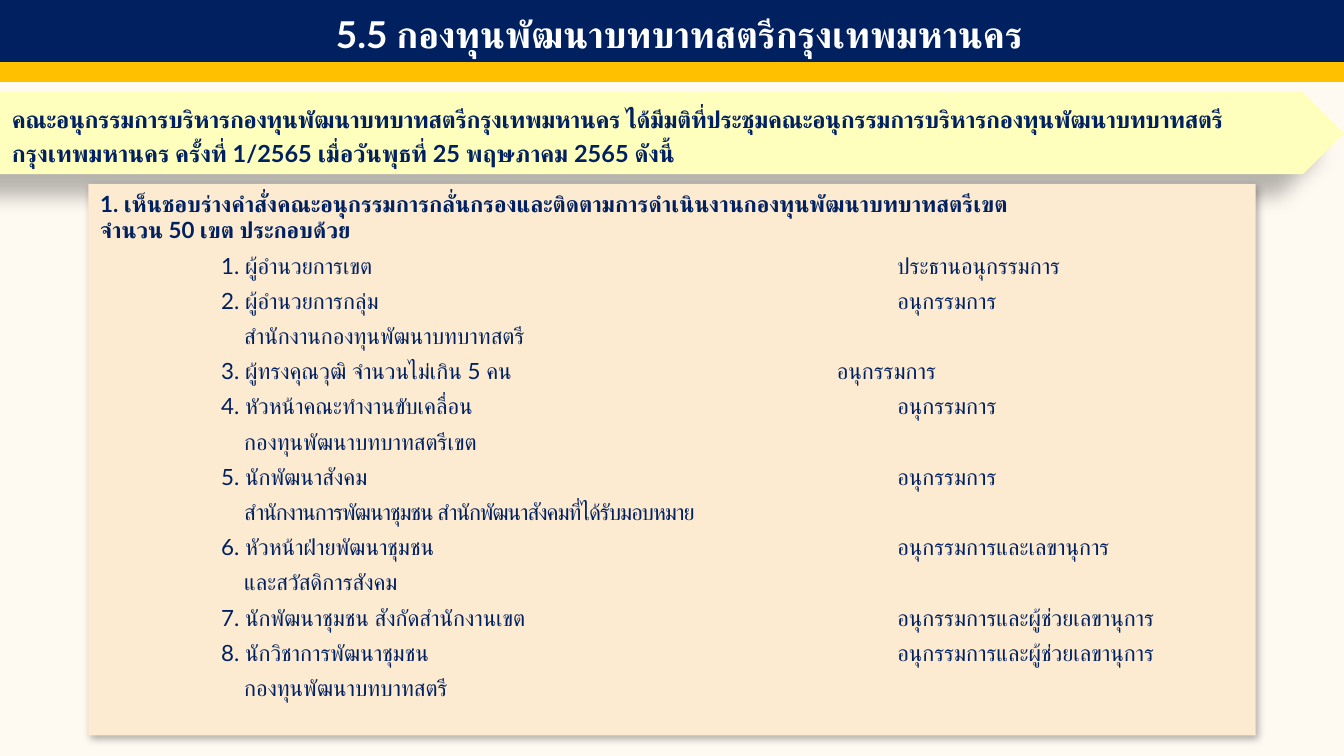
from lxml.etree import SubElement
from pptx import Presentation
from pptx.dml.color import RGBColor
from pptx.enum.shapes import MSO_SHAPE
from pptx.enum.text import MSO_ANCHOR, PP_ALIGN
from pptx.oxml.ns import qn
from pptx.util import Inches, Pt

# Content
TITLE = "5.5 กองทุนพัฒนาบทบาทสตรีกรุงเทพมหานคร"
# Each part: text, letter spacing in hundredths of a point
RESOLUTION = [
    ("คณะอนุกรรมการบริหารกองทุนพัฒนาบทบาทสตรีกรุงเทพมหานคร "
     "ได้มีมติที่ประชุมคณะอนุกรรมการบริหารกองทุนพัฒนาบทบาทสตรี", -20),
    ("กรุงเทพมหานคร ครั้งที่ 1/2565 เมื่อวันพุธที่ 25 พฤษภาคม 2565 ดังนี้", 0),
]
HEADING = ("1. เห็นชอบร่างคำสั่งคณะอนุกรรมการกลั่นกรองและติดตามการดำเนินงาน"
           "กองทุนพัฒนาบทบาทสตรีเขต\vจำนวน 50 เขต ประกอบด้วย")
MEMBER = "อนุกรรมการ"
ASSISTANT = "อนุกรรมการและผู้ช่วยเลขานุการ"
ROLE_TAB, NEAR_ROLE_TAB = 6.59, 6.09
# Each member: name, second line, role, role tab, second line spacing
COMMITTEE = [
    ("ผู้อำนวยการเขต", "", "ประธานอนุกรรมการ", ROLE_TAB, 0),
    ("ผู้อำนวยการกลุ่ม", "สำนักงานกองทุนพัฒนาบทบาทสตรี", MEMBER, ROLE_TAB, 0),
    ("ผู้ทรงคุณวุฒิ จำนวนไม่เกิน 5 คน", "", MEMBER, NEAR_ROLE_TAB, 0),
    ("หัวหน้าคณะทำงานขับเคลื่อน", "กองทุนพัฒนาบทบาทสตรีเขต", MEMBER, ROLE_TAB, 0),
    ("นักพัฒนาสังคม", "สำนักงานการพัฒนาชุมชน สำนักพัฒนาสังคมที่ได้รับมอบหมาย",
     MEMBER, ROLE_TAB, -60),
    ("หัวหน้าฝ่ายพัฒนาชุมชน", "และสวัสดิการสังคม", "อนุกรรมการและเลขานุการ", ROLE_TAB, 0),
    ("นักพัฒนาชุมชน สังกัดสำนักงานเขต", "", ASSISTANT, ROLE_TAB, 0),
    ("นักวิชาการพัฒนาชุมชน", "กองทุนพัฒนาบทบาทสตรี", ASSISTANT, ROLE_TAB, 0),
]
NAME_TAB, SECOND_LINE_TAB = 1.0, 1.19
NAVY, GOLD, YELLOW, CREAM, WHITE = "002060", "FFC000", "FFFFBD", "FCEBD1", "FFFFFF"
PAGE = "FEF9F1"
WIDTH, HEIGHT = 11.11, 6.25


def paint(color_format, color):
    color_format.rgb = RGBColor.from_string(color)


def add_block(preset, left, top, width, height, color, outlined=False):
    shape = slide.shapes.add_shape(
        preset, Inches(left), Inches(top), Inches(width), Inches(height))
    shape.shadow.inherit = False
    shape.fill.solid()
    paint(shape.fill.fore_color, color)
    if outlined:
        shape.line.width = Pt(1)
        paint(shape.line.color, color)
    else:
        shape.line.fill.background()
    shape.text_frame.word_wrap = True
    return shape


def add_shadow(shape, opacity, blur, distance, angle):
    effects = shape.element.spPr.find(qn("a:effectLst"))
    shadow = SubElement(effects, qn("a:outerShdw"), blurRad=str(Pt(blur)),
                        dist=str(Pt(distance)), dir=str(angle * 60000),
                        algn="tl", rotWithShape="0")
    color = SubElement(shadow, qn("a:srgbClr"), val="000000")
    SubElement(color, qn("a:alpha"), val=str(opacity * 1000))


def style(paragraph, size, color, bold, align=PP_ALIGN.LEFT):
    paragraph.alignment = align
    font = paragraph.font
    font.name, font.size, font.bold = "Lato", Pt(size), bold
    paint(font.color, color)
    SubElement(paragraph._p.pPr.find(qn("a:defRPr")), qn("a:cs"), typeface="Lato")


def add_run(paragraph, text, spacing=0):
    run = paragraph.add_run()
    run.text = text
    if spacing:
        run._r.get_or_add_rPr().set("spc", str(spacing))


def add_row(text_frame, text, tabs, spacing=0):
    paragraph = text_frame.add_paragraph()
    paragraph.space_before = paragraph.space_after = Pt(2.5)
    tab_list = SubElement(paragraph._p.get_or_add_pPr(), qn("a:tabLst"))
    for position in tabs:
        SubElement(tab_list, qn("a:tab"), pos=str(Inches(position)), algn="l")
    add_run(paragraph, text, spacing)
    style(paragraph, 13.3, NAVY, False)


presentation = Presentation()
presentation.slide_width, presentation.slide_height = Inches(WIDTH), Inches(HEIGHT)
slide = presentation.slides.add_slide(presentation.slide_layouts[6])
slide.background.fill.solid()
paint(slide.background.fill.fore_color, PAGE)

# Gold stripe
add_block(MSO_SHAPE.RECTANGLE, 0, 0.51, WIDTH, 0.16, GOLD, outlined=True)

# Resolution banner
banner = add_block(MSO_SHAPE.PENTAGON, 0, 0.76, WIDTH, 0.68, YELLOW)
add_shadow(banner, 28, 11.8, 19.7, 141)
banner.text_frame.vertical_anchor = MSO_ANCHOR.MIDDLE
paragraph = banner.text_frame.paragraphs[0]
paragraph.line_spacing = 1.2
for text, spacing in RESOLUTION:
    add_run(paragraph, text, spacing)
style(paragraph, 14, NAVY, True)

# Committee panel
panel = add_block(MSO_SHAPE.RECTANGLE, 0.73, 1.52, 9.65, 4.56, CREAM)
add_shadow(panel, 30, 4.5, 2.6, 53)
text_frame = panel.text_frame
text_frame.vertical_anchor = MSO_ANCHOR.TOP
paragraph = text_frame.paragraphs[0]
paragraph.text = HEADING
paragraph.space_after = Pt(2.5)
style(paragraph, 13.3, NAVY, True)
for number, (name, second_line, role, role_tab, spacing) in enumerate(COMMITTEE, 1):
    add_row(text_frame, f"\t{number}. {name}\t{role}", (NAME_TAB, role_tab))
    if second_line:
        add_row(text_frame, f"\t{second_line}", (SECOND_LINE_TAB,), spacing)

# Title bar
title_bar = add_block(MSO_SHAPE.RECTANGLE, 0, 0, WIDTH, 0.51, NAVY, outlined=True)
text_frame = title_bar.text_frame
text_frame.vertical_anchor = MSO_ANCHOR.MIDDLE
text_frame.margin_left, text_frame.margin_top = Inches(0.22), Inches(0.1)
paragraph = text_frame.paragraphs[0]
paragraph.text = TITLE
style(paragraph, 22, WHITE, True, PP_ALIGN.CENTER)

presentation.save("out.pptx")
